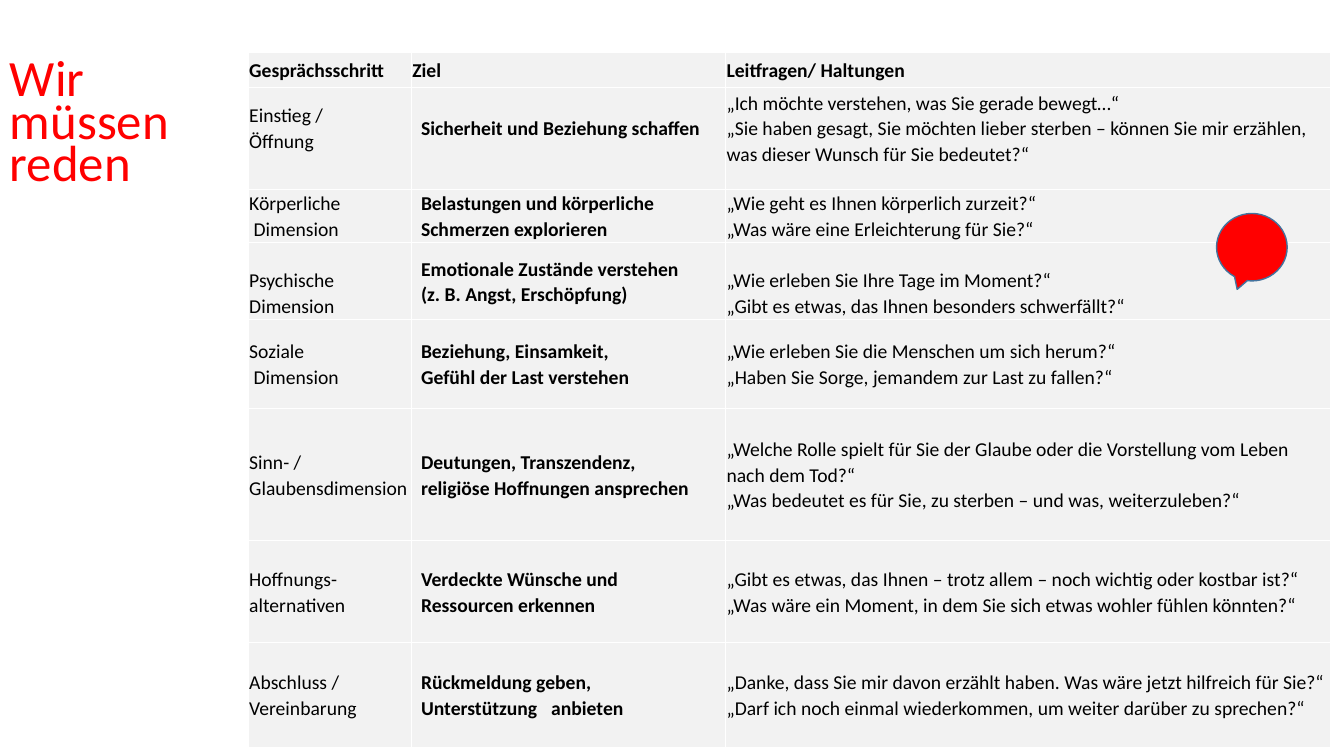
"""Build the slide "Wir müssen reden" with its table of conversation steps."""
from lxml import etree
from pptx import Presentation
from pptx import util as u
from pptx.dml.color import RGBColor
from pptx.enum import shapes, text
from pptx.oxml.ns import qn


def colour(hex_code):
    return RGBColor.from_string(hex_code)


def format_runs(paragraph, size, hex_code, bold):
    for run in paragraph.runs:
        run.font.name = "Calibri"
        run.font.size = u.Pt(size)
        run.font.bold = bold
        run.font.color.rgb = colour(hex_code)


HEADER_ROW, OPENING_ROW, PSYCHE_ROW, CLOSING_ROW = 1, 2, 4, 8
GOAL_COLUMN = 1
column_widths = [4.11, 7.92, 15.24]
row_heights = [0.98, 0.89, 2.57, 1.31, 1.94, 2.24, 3.33, 2.57, 2.64]
rows = [
    ("", "", ""),
    ("Gesprächsschritt", "Ziel", "Leitfragen/ Haltungen"),
    ("Einstieg /\nÖffnung", "Sicherheit und Beziehung schaffen",
     "„Ich möchte verstehen, was Sie gerade bewegt…“\n"
     "„Sie haben gesagt, Sie möchten lieber sterben – können Sie mir erzählen, "
     "was dieser Wunsch für Sie bedeutet?“"),
    ("Körperliche\nDimension",
     "Belastungen und körperliche\nSchmerzen explorieren",
     "„Wie geht es Ihnen körperlich zurzeit?“\n"
     "„Was wäre eine Erleichterung für Sie?“"),
    ("Psychische\nDimension",
     "Emotionale Zustände verstehen\n(z. B. Angst, Erschöpfung)",
     "„Wie erleben Sie Ihre Tage im Moment?“\n"
     "„Gibt es etwas, das Ihnen besonders schwerfällt?“"),
    ("Soziale\nDimension",
     "Beziehung, Einsamkeit,\nGefühl der Last verstehen",
     "„Wie erleben Sie die Menschen um sich herum?“\n"
     "„Haben Sie Sorge, jemandem zur Last zu fallen?“"),
    ("Sinn- /\nGlaubensdimension",
     "Deutungen, Transzendenz,\nreligiöse Hoffnungen ansprechen",
     "„Welche Rolle spielt für Sie der Glaube oder die Vorstellung vom Leben "
     "nach dem Tod?“\n"
     "„Was bedeutet es für Sie, zu sterben – und was, weiterzuleben?“"),
    ("Hoffnungs-\nalternativen",
     "Verdeckte Wünsche und\nRessourcen erkennen",
     "„Gibt es etwas, das Ihnen – trotz allem – noch wichtig oder kostbar ist?“\n"
     "„Was wäre ein Moment, in dem Sie sich etwas wohler fühlen könnten?“"),
    ("Abschluss /\nVereinbarung",
     "Rückmeldung geben,\nUnterstützung\tanbieten",
     "„Danke, dass Sie mir davon erzählt haben. Was wäre jetzt hilfreich für Sie?“\n"
     "„Darf ich noch einmal wiederkommen, um weiter darüber zu sprechen?“"),
]

presentation = Presentation()
presentation.slide_width = u.Cm(33.87)
presentation.slide_height = u.Cm(19.05)
slide = presentation.slides.add_slide(presentation.slide_layouts[6])

table = slide.shapes.add_table(
    len(rows), len(column_widths), u.Cm(6.25), u.Cm(0.33),
    u.Cm(sum(column_widths)), u.Cm(sum(row_heights))).table
table.horz_banding = False
for column, width in zip(table.columns, column_widths):
    column.width = u.Cm(width)
for row, height in zip(table.rows, row_heights):
    row.height = u.Cm(height)

for row_index, row_texts in enumerate(rows):
    for column_index, cell_text in enumerate(row_texts):
        cell = table.cell(row_index, column_index)
        is_goal = column_index == GOAL_COLUMN and row_index > HEADER_ROW
        cell.fill.solid()
        cell.fill.fore_color.rgb = colour("F2F2F2" if row_index else "FFFFFF")
        cell.margin_left = u.Cm(0.25 if is_goal else 0.03)
        cell.margin_right = cell.margin_top = u.Cm(0.03)
        cell.margin_bottom = u.Cm(0.55 if row_index == OPENING_ROW else 0.03)
        at_bottom = row_index == PSYCHE_ROW and not is_goal
        cell.vertical_anchor = (
            text.MSO_ANCHOR.BOTTOM if at_bottom else text.MSO_ANCHOR.MIDDLE)
        cell.text_frame.text = cell_text
        for paragraph in cell.text_frame.paragraphs:
            paragraph.line_spacing = 1.07
            format_runs(paragraph, 14, "000000", is_goal or row_index == HEADER_ROW)

for row_index in (3, 5):
    dimension = table.cell(row_index, 0).text_frame.paragraphs[1]
    dimension._p.get_or_add_pPr().set("marL", str(u.Cm(0.11)))

support = table.cell(CLOSING_ROW, GOAL_COLUMN).text_frame.paragraphs[1]
tab_list = etree.SubElement(support._p.get_or_add_pPr(), qn("a:tabLst"))
etree.SubElement(tab_list, qn("a:tab"), pos=str(u.Cm(3.28)), algn="l")

title = slide.shapes.add_textbox(u.Cm(0), u.Cm(1.24), u.Cm(6.25), u.Cm(5))
title.text_frame.word_wrap = True
title.text_frame.vertical_anchor = text.MSO_ANCHOR.TOP
title.text_frame.margin_top = u.Cm(0.33)
title.text_frame.text = "Wir müssen\nreden"
for paragraph in title.text_frame.paragraphs:
    paragraph.line_spacing = 0.7
    format_runs(paragraph, 36.3, "FF0000", False)

callout = slide.shapes.add_shape(
    shapes.MSO_SHAPE.OVAL_CALLOUT, u.Cm(30.66), u.Cm(5.38), u.Cm(1.78), u.Cm(1.7))
callout.shadow.inherit = False
callout.fill.solid()
callout.fill.fore_color.rgb = colour("FF0000")
callout.line.color.rgb = colour("43739E")
callout.line.width = u.Pt(1)

presentation.save("out.pptx")
